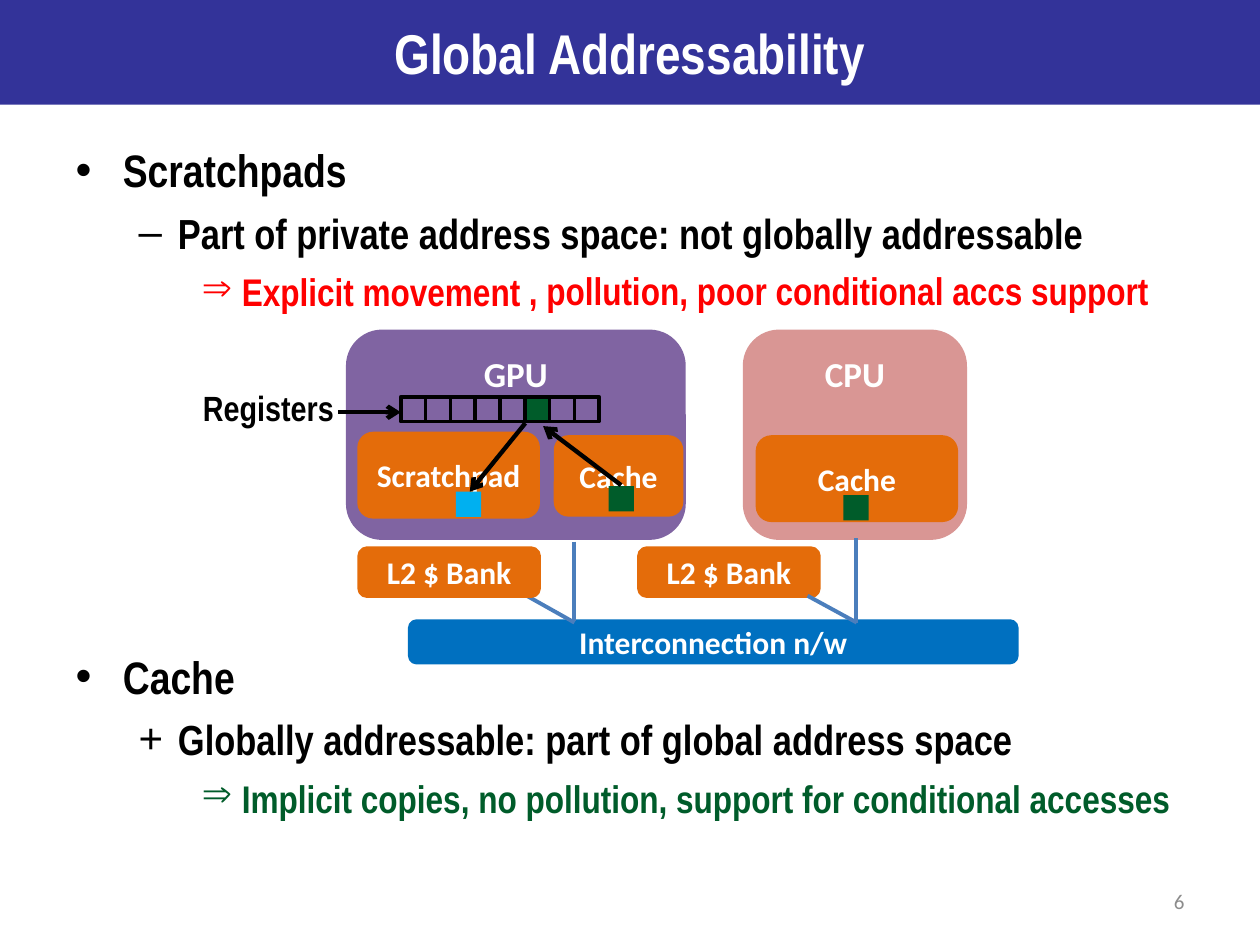
from dataclasses import dataclass
from typing import Optional

from pptx import Presentation
from pptx.dml.color import RGBColor
from pptx.enum.shapes import MSO_CONNECTOR, MSO_SHAPE
from pptx.enum.text import MSO_ANCHOR, MSO_AUTO_SIZE, PP_ALIGN
from pptx.oxml.ns import qn
from pptx.util import Cm, Pt
from lxml.etree import SubElement

COLORS = {
    "navy": "333399", "white": "FFFFFF", "black": "000000", "red": "FF0000",
    "green": "005C2A", "cyan": "00B0F0", "purple": "8064A2", "pink": "D99694",
    "orange": "E46C0A", "blue": "0070C0", "link": "4B7EBC", "gray": "8C8C8C",
}
NARROW = "Arial Narrow"
CELL = 0.5
BLOCK = 0.51


@dataclass
class Bullet:
    text: str
    level: int
    mark: str
    size: int
    color: str = "black"
    before: float = 6
    mark_font: str = "Arial"


@dataclass
class Unit:
    text: str
    left: float
    top: float
    width: float
    height: float
    color: str
    size: int = 18
    anchor: MSO_ANCHOR = MSO_ANCHOR.MIDDLE


@dataclass
class Line:
    start: tuple[float, float]
    end: tuple[float, float]
    color: str = "link"
    width: float = 2.25
    arrow: bool = False


BULLETS = [
    Bullet("Scratchpads", 0, "•", 26),
    Bullet("Part of private address space: not globally addressable", 1, "–", 24),
    Bullet(" Explicit movement", 2, "⇒", 22, "red", mark_font="Symbol"),
    Bullet("Cache", 0, "•", 26, before=191),
    Bullet("Globally addressable: part of global address space", 1, "+", 24),
    Bullet(" Implicit copies, no pollution, support for conditional accesses",
           2, "⇒", 22, "green", mark_font="Symbol"),
]
DIAGRAM = [
    Unit("GPU", 7.01, 6.68, 6.78, 4.17, "purple", 20, MSO_ANCHOR.TOP),
    Unit("Cache", 11.2, 8.81, 2.54, 1.57, "orange"),
    Unit("Interconnection n/w", 8.26, 12.52, 12.24, 0.84, "blue"),
    Line((11.58, 10.92), (11.58, 12.52)),
    Line((10.62, 12.01), (11.58, 12.55)),
    Unit("Scratchpad", 7.24, 8.74, 3.61, 1.68, "orange"),
    Unit("L2 $ Bank", 7.24, 11.05, 3.63, 0.97, "orange"),
    Unit("L2 $ Bank", 12.88, 11.05, 3.63, 0.97, "orange"),
    Unit("CPU", 15.01, 6.68, 4.45, 4.17, "pink", 20, MSO_ANCHOR.TOP),
    Line((17.25, 10.85), (17.25, 12.55)),
    Line((16.28, 12.01), (17.27, 12.55)),
    Unit("Cache", 15.27, 8.81, 4.01, 1.68, "orange"),
]
BLOCKS = [(17.0, 9.98, "green"), (9.19, 9.91, "cyan"), (12.27, 9.8, "green")]
ARROWS = [
    Line((6.81, 8.31), (8.08, 8.31), "black", 2.5, True),
    Line((10.59, 8.53), (9.47, 9.91), "black", 2.5, True),
    Line((12.52, 9.78), (10.95, 8.59), "black", 2.5, True),
]


def rgb(name: str) -> RGBColor:
    return RGBColor.from_string(COLORS[name])


def add_span(para, text: str, size: float, color: str,
             font: str = NARROW, bold: bool = True) -> None:
    span = para.add_run()
    span.text = text
    span.font.size = Pt(size)
    span.font.name = font
    span.font.bold = bold
    span.font.color.rgb = rgb(color)


def move(shape, left: float, top: float, width: float, height: float) -> None:
    shape.left, shape.top = Cm(left), Cm(top)
    shape.width, shape.height = Cm(width), Cm(height)


def add_box(page, kind: MSO_SHAPE, left: float, top: float, width: float,
            height: float, fill: Optional[str], line: Optional[str]):
    box = page.shapes.add_shape(kind, Cm(left), Cm(top), Cm(width), Cm(height))
    box.shadow.inherit = False
    if fill:
        box.fill.solid()
        box.fill.fore_color.rgb = rgb(fill)
    else:
        box.fill.background()
    if line:
        box.line.color.rgb = rgb(line)
        box.line.width = Pt(2)
    else:
        box.line.fill.background()
    return box


def add_unit(page, unit: Unit) -> None:
    box = add_box(page, MSO_SHAPE.ROUNDED_RECTANGLE, unit.left, unit.top,
                  unit.width, unit.height, unit.color, unit.color)
    frame = box.text_frame
    frame.word_wrap = False
    frame.vertical_anchor = unit.anchor
    frame.margin_top = Cm(0.23) if unit.anchor == MSO_ANCHOR.TOP else Cm(0.13)
    para = frame.paragraphs[0]
    para.alignment = PP_ALIGN.CENTER
    add_span(para, unit.text, unit.size, "white", "Calibri")


def add_line(page, line: Line) -> None:
    points = [Cm(value) for value in (*line.start, *line.end)]
    connector = page.shapes.add_connector(MSO_CONNECTOR.STRAIGHT, *points)
    connector.line.color.rgb = rgb(line.color)
    connector.line.width = Pt(line.width)
    properties = connector.element.spPr
    if line.arrow:
        SubElement(properties.find(qn("a:ln")), qn("a:tailEnd"), type="arrow")
    SubElement(properties, qn("a:effectLst"))


def add_label(page, left: float, top: float, width: float, height: float):
    box = page.shapes.add_textbox(Cm(left), Cm(top), Cm(width), Cm(height))
    box.text_frame.word_wrap = True
    return box.text_frame


def fill_title(page) -> None:
    title = page.shapes.title
    move(title, 0, 0, 25.4, 2.11)
    title.fill.solid()
    title.fill.fore_color.rgb = rgb("navy")
    title.text_frame.vertical_anchor = MSO_ANCHOR.MIDDLE
    add_span(title.text_frame.paragraphs[0], "Global Addressability", 32, "white")


def fill_body(page) -> None:
    body = page.placeholders[1]
    move(body, 1.27, 2.74, 23.93, 14.48)
    frame = body.text_frame
    frame.auto_size = MSO_AUTO_SIZE.NONE
    for index, bullet in enumerate(BULLETS):
        para = frame.add_paragraph() if index else frame.paragraphs[0]
        para.level = bullet.level
        para.space_before = Pt(bullet.before)
        properties = para._p.get_or_add_pPr()
        SubElement(properties, qn("a:buFont"), typeface=bullet.mark_font)
        SubElement(properties, qn("a:buChar"), char=bullet.mark)
        add_span(para, bullet.text, bullet.size, bullet.color)


def draw_registers(page) -> None:
    for index in range(8):
        fill = "green" if index == 5 else None
        add_box(page, MSO_SHAPE.RECTANGLE, 8.08 + index * CELL, 8.0,
                CELL, CELL, fill, "black")


def main() -> None:
    deck = Presentation()
    deck.slide_width, deck.slide_height = Cm(25.4), Cm(19.05)
    page = deck.slides.add_slide(deck.slide_layouts[1])
    fill_title(page)
    fill_body(page)
    for item in DIAGRAM:
        if isinstance(item, Unit):
            add_unit(page, item)
        else:
            add_line(page, item)
    draw_registers(page)
    for left, top, color in BLOCKS:
        add_box(page, MSO_SHAPE.RECTANGLE, left, top, BLOCK, BLOCK, color, None)
    for arrow in ARROWS:
        add_line(page, arrow)
    registers = add_label(page, 3.84, 7.67, 3.18, 1.12)
    add_span(registers.paragraphs[0], "Registers", 20, "black")
    drawbacks = add_label(page, 10.41, 5.26, 14.15, 1.19)
    add_span(drawbacks.paragraphs[0],
             ", pollution, poor conditional accs support", 22, "red")
    number = add_label(page, 18.21, 17.65, 5.92, 1.02)
    number.vertical_anchor = MSO_ANCHOR.MIDDLE
    number.paragraphs[0].alignment = PP_ALIGN.RIGHT
    add_span(number.paragraphs[0], "6", 12, "gray", "Calibri", False)
    deck.save("out.pptx")


if __name__ == "__main__":
    main()
